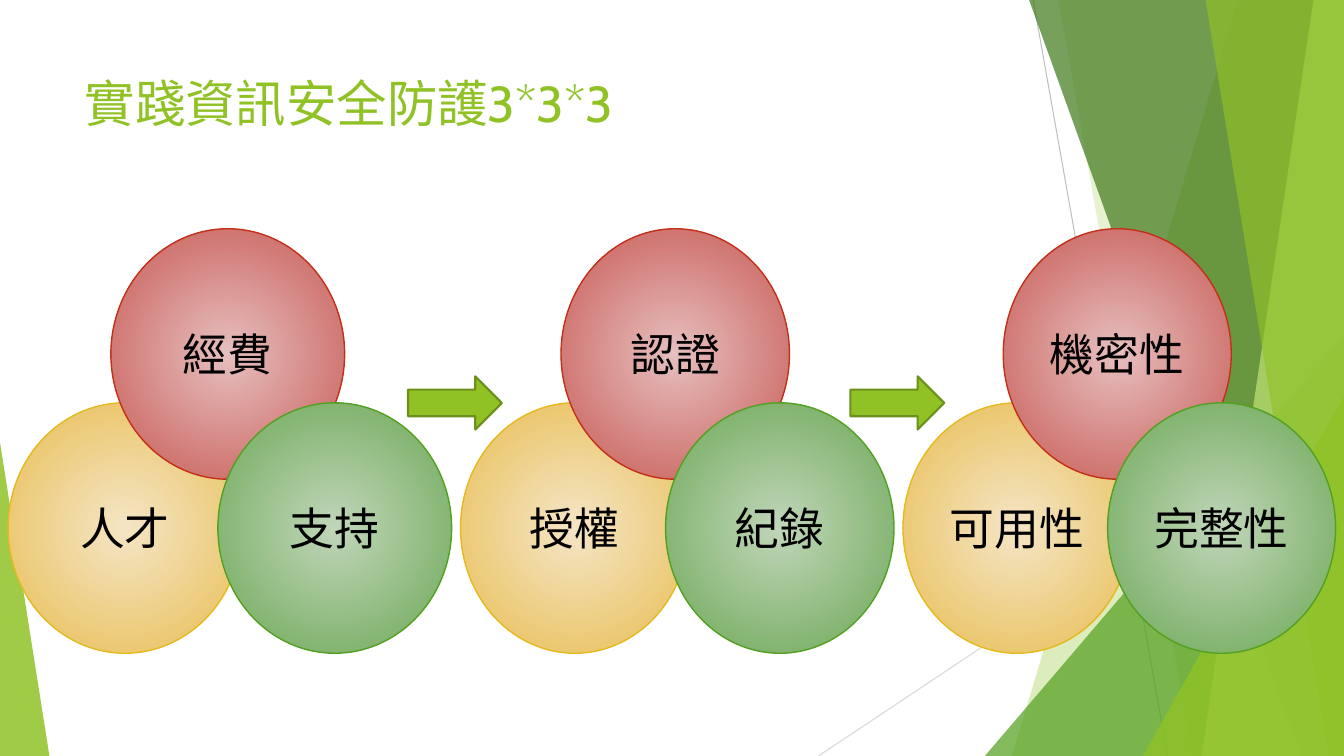
from lxml import etree
from pptx import Presentation
from pptx.dml.color import RGBColor
from pptx.enum.shapes import MSO_CONNECTOR, MSO_SHAPE
from pptx.enum.text import MSO_ANCHOR, PP_ALIGN
from pptx.oxml.ns import qn
from pptx.util import Pt

STRAIGHT = MSO_CONNECTOR.STRAIGHT
TRIANGLE = MSO_SHAPE.ISOSCELES_TRIANGLE
CIRCLE = MSO_SHAPE.FLOWCHART_CONNECTOR
ARROW = MSO_SHAPE.RIGHT_ARROW
TOP, MIDDLE = MSO_ANCHOR.TOP, MSO_ANCHOR.MIDDLE
LEFT, CENTER = PP_ALIGN.LEFT, PP_ALIGN.CENTER

WIDTH, HEIGHT = 960, 540
FONT = "Cabin"
LIME = "90C226"
LEAF = "54A021"

# (left and top as shares of the cluster's free space, centre, rim, line)
CIRCLE_STYLES = [
    (0, 1, "F5E5C5", "E9C260", "E6B91E"),
    (0.49, 0, "E6BFBE", "CB6560", "C42F1A"),
    (1, 1, "C0D6B9", "76AD61", LEAF),
]
CLUSTERS = [
    (5.8, 316.8, ["人才", "經費", "支持"]),
    (329, 309.6, ["授權", "認證", "紀錄"]),
    (645, 309, ["可用性", "機密性", "完整性"]),
]


def color(hex_value):
    """Return the colour for a hex string."""
    return RGBColor.from_string(hex_value)


def place(slide, kind, left, top, width, height):
    """Add a preset shape without a shadow."""
    shape = slide.shapes.add_shape(kind, Pt(left), Pt(top), Pt(width), Pt(height))
    shape.shadow.inherit = False
    return shape


def tint(shape, hex_value, opacity):
    """Give a borderless shape a translucent fill."""
    shape.shadow.inherit = False
    shape.fill.solid()
    shape.fill.fore_color.rgb = color(hex_value)
    shape.line.fill.background()
    rgb = shape._element.spPr.find(qn("a:solidFill")).find(qn("a:srgbClr"))
    etree.SubElement(rgb, qn("a:alpha"), val=str(opacity * 1000))


def add_ray(slide, start, end, hex_value):
    """Draw a thin background line."""
    ray = slide.shapes.add_connector(STRAIGHT, *map(Pt, start + end))
    ray.line.color.rgb = color(hex_value)
    ray.line.width = Pt(0.75)
    etree.SubElement(ray._element.spPr, qn("a:effectLst"))


def add_facet(slide, top_left, bottom_left, hex_value, opacity):
    """Draw a slanted panel that reaches the right edge."""
    builder = slide.shapes.build_freeform(Pt(top_left), 0)
    corners = [(WIDTH, 0), (WIDTH, HEIGHT), (bottom_left, HEIGHT)]
    builder.add_line_segments([(Pt(x), Pt(y)) for x, y in corners])
    tint(builder.convert_to_shape(), hex_value, opacity)


def add_wedge(slide, left, top, width, apex, hex_value, opacity):
    """Draw a triangle that stands on the bottom edge."""
    wedge = place(slide, TRIANGLE, left, top, width, HEIGHT - top)
    wedge.adjustments[0] = apex
    tint(wedge, hex_value, opacity)


def add_backdrop(slide):
    """Draw the green facets from back to front."""
    add_ray(slide, (738, 0), (834, HEIGHT), "BFBFBF")
    add_ray(slide, (WIDTH, 290), (584.6, HEIGHT), "D9D9D9")
    add_facet(slide, 884.2, 722.9, LIME, 30)
    add_facet(slide, 756, 851.8, LIME, 20)
    add_wedge(slide, 703.5, 239.8, 256.5, 1, LEAF, 72)
    add_facet(slide, 735.1, 929.5, "3F7819", 70)
    add_facet(slide, 938.2, 858.2, "C0E474", 70)
    add_facet(slide, 861.1, 949, LIME, 65)
    add_wedge(slide, 816.5, 283, 143.5, 1, LIME, 80)
    add_wedge(slide, 0, 316, 35.3, 0, LIME, 85)


def add_title(slide, left, top, width, height):
    """Fill and format the title placeholder."""
    title = slide.shapes.title
    title.left, title.top, title.width, title.height = map(Pt, (left, top, width, height))
    title.text_frame.text = "實踐資訊安全防護3*3*3"
    title.text_frame.vertical_anchor = TOP
    heading = title.text_frame.paragraphs[0]
    heading.alignment = LEFT
    heading.font.name = FONT
    heading.font.size = Pt(36)
    heading.font.color.rgb = color(LIME)


def fill_radial(shape, centre, rim):
    """Fill a shape with a gradient from its centre to its rim."""
    shape.fill.gradient()
    inner, outer = shape.fill.gradient_stops
    inner.color.rgb, inner.position = color(centre), 0
    outer.color.rgb, outer.position = color(rim), 0.88
    gradient = shape._element.spPr.find(qn("a:gradFill"))
    gradient.remove(gradient.find(qn("a:lin")))
    radial = etree.SubElement(gradient, qn("a:path"), path="circle")
    sides = dict.fromkeys("ltrb", "50000")
    etree.SubElement(radial, qn("a:fillToRect"), sides)


def add_cluster(slide, left, top, width, height, labels):
    """Draw three overlapping labelled circles in the given box."""
    circle_width, circle_height = width * 0.527, height * 0.59
    for label, (x, y, centre, rim, outline) in zip(labels, CIRCLE_STYLES):
        circle = place(slide, CIRCLE, left + x * (width - circle_width),
                       top + y * (height - circle_height), circle_width, circle_height)
        fill_radial(circle, centre, rim)
        circle.line.color.rgb = color(outline)
        circle.line.width = Pt(1)
        frame = circle.text_frame
        frame.margin_left = frame.margin_right = 0
        frame.vertical_anchor = MIDDLE
        frame.text = label
        caption = frame.paragraphs[0]
        caption.alignment = CENTER
        caption.font.name = FONT
        caption.font.size = Pt(32)
        caption.font.color.rgb = color("000000")


def add_arrow(slide, left, top, width, height):
    """Draw an arrow to the next cluster."""
    arrow = place(slide, ARROW, left, top, width, height)
    arrow.fill.solid()
    arrow.fill.fore_color.rgb = color(LIME)
    arrow.line.color.rgb = color("6B901C")
    arrow.line.width = Pt(1.5)


def main():
    """Build and save the slide."""
    deck = Presentation()
    deck.slide_width, deck.slide_height = Pt(WIDTH), Pt(HEIGHT)
    slide = deck.slides.add_slide(deck.slide_layouts.get_by_name("Title Only"))
    add_backdrop(slide)
    add_title(slide, 53.3, 48, 676.8, 104)
    for index, (left, width, labels) in enumerate(CLUSTERS):
        add_cluster(slide, left, 163.4, width, 303.2, labels)
        if index:
            add_arrow(slide, left - 37.5, 268.8, 67, 38)
    deck.save("out.pptx")


if __name__ == "__main__":
    main()
